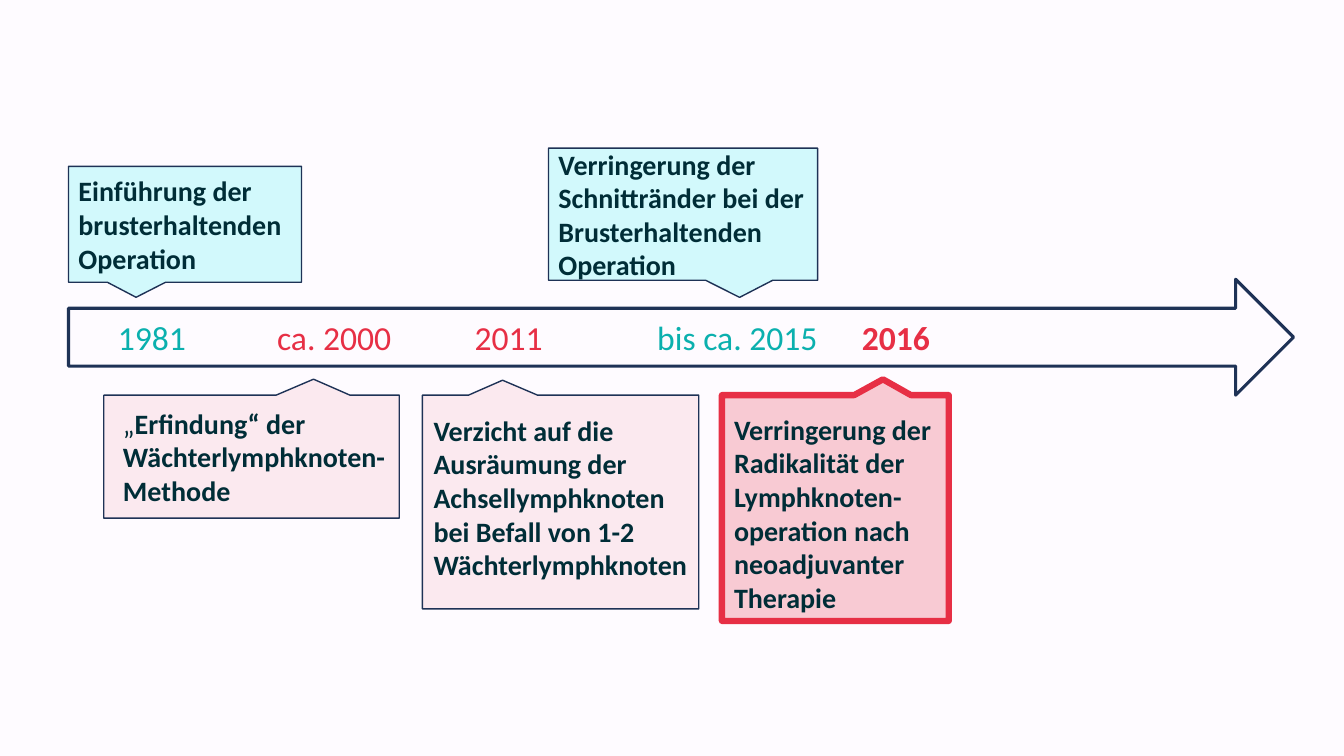
import pptx
import pptx.util
import pptx.dml.color
import pptx.enum.shapes
import pptx.enum.text
import pptx.oxml
import pptx.oxml.ns
from pptx.util import Inches

RGBColor = pptx.dml.color.RGBColor
BACKGROUND = RGBColor(0xFE, 0xFB, 0xFF)
NAVY = RGBColor(0x1E, 0x32, 0x56)
INK = RGBColor(0x00, 0x2D, 0x37)
CYAN = RGBColor(0xD2, 0xF9, 0xFC)
PINK = RGBColor(0xF8, 0xCA, 0xD3)
TEAL = RGBColor(0x0B, 0xB0, 0xAE)
RED = RGBColor(0xE7, 0x2F, 0x45)
SHAPES = pptx.enum.shapes.MSO_SHAPE
TOP = pptx.enum.text.MSO_ANCHOR.TOP
MIDDLE = pptx.enum.text.MSO_ANCHOR.MIDDLE


def add_outlined_shape(preset, box, color, width):
    shape = slide.shapes.add_shape(preset, *map(Inches, box))
    shape.shadow.inherit = False
    shape.line.color.rgb = color
    shape.line.width = pptx.util.Pt(width)
    return shape


def add_run(paragraph, text, **font_values):
    run = paragraph.add_run()
    run.text = text
    run.font.name = "Calibri"
    run.font.color.rgb = font_values.pop("color")
    for name, value in font_values.items():
        setattr(run.font, name, value)


presentation = pptx.Presentation()
presentation.slide_width = Inches(13.33)
presentation.slide_height = Inches(7.5)
slide = presentation.slides.add_slide(presentation.slide_layouts[6])
slide.background.fill.solid()
slide.background.fill.fore_color.rgb = BACKGROUND

# Time arrow
arrow = add_outlined_shape(SHAPES.RIGHT_ARROW, (0.68, 2.77, 12.15, 1.15), NAVY, 2.25)
arrow.fill.background()

# Dates, each on its own tab stop
dates = [
    ("1981", TEAL, False, 0.29),
    ("ca. 2000", RED, False, 1.87),
    ("2011", RED, False, 3.83),
    ("bis ca. 2015", TEAL, False, 5.64),
    ("2016", RED, True, 7.67),
]
date_box = slide.shapes.add_textbox(*map(Inches, (0.78, 3.09, 11.56, 0.5)))
date_box.text_frame.word_wrap = True
date_line = date_box.text_frame.paragraphs[0]
tab_list = pptx.oxml.ns.qn("a:tabLst")
tabs = date_line._p.get_or_add_pPr().makeelement(tab_list, {})
date_line._p.get_or_add_pPr().append(tabs)
for date, color, bold, position in dates:
    tab = tabs.makeelement(
        pptx.oxml.ns.qn("a:tab"), {"pos": str(Inches(position)), "algn": "l"}
    )
    tabs.append(tab)
    add_run(date_line, "\t" + date, color=color, bold=bold, size=pptx.util.Pt(24))

# Callouts: box, pointer tip, fill, opacity, line, line width, anchor,
# margins (left, top, right), text runs as (text, bold)
cyan_style = (CYAN, 100, NAVY, 1, MIDDLE, (0.1, 0.05, 0.1))
callouts = [
    ((0.68, 1.65, 2.31, 1.15), (-0.21, 0.63), *cyan_style,
     [("Einführung der brusterhaltenden Operation", True)]),
    ((5.44, 1.47, 2.67, 1.31), (0.21, 0.63), *cyan_style,
     [("Verringerung der Schnittränder bei der Brusterhaltenden Operation", True)]),
    ((1.03, 3.92, 2.93, 1.22), (0.21, -0.63), PINK, 35, NAVY, 1, TOP, (0.19, 0.11, 0.1),
     [("„", False), ("Erfindung“ der Wächterlymphknoten-Methode", True)]),
    ((4.19, 3.92, 2.74, 2.12), (-0.21, -0.57), PINK, 35, NAVY, 1, TOP, (0.11, 0.18, 0),
     [("Verzicht auf die Ausräumung der Achsellymphknoten bei Befall von 1-2 "
       "Wächterlymphknoten", True)]),
    ((7.16, 3.92, 2.25, 2.24), (0.21, -0.57), PINK, 100, RED, 4.5, TOP, (0.12, 0.17, 0.1),
     [("Verringerung der Radikalität der Lymphknoten-operation nach "
       "neoadjuvanter Therapie", True)]),
]
for box, tip, fill, opacity, line, width, anchor, margins, runs in callouts:
    callout = add_outlined_shape(SHAPES.RECTANGULAR_CALLOUT, box, line, width)
    callout.adjustments[0], callout.adjustments[1] = tip
    callout.fill.solid()
    callout.fill.fore_color.rgb = fill
    if opacity < 100:
        fill_color = callout._element.spPr.find(
            pptx.oxml.ns.qn("a:solidFill") + "/" + pptx.oxml.ns.qn("a:srgbClr")
        )
        alpha = fill_color.makeelement(
            pptx.oxml.ns.qn("a:alpha"), {"val": str(opacity * 1000)}
        )
        fill_color.append(alpha)
    left, top, right = map(Inches, margins)
    frame_format = {
        "word_wrap": True,
        "vertical_anchor": anchor,
        "margin_left": left,
        "margin_top": top,
        "margin_right": right,
        "margin_bottom": Inches(0.05),
    }
    for name, value in frame_format.items():
        setattr(callout.text_frame, name, value)
    paragraph = callout.text_frame.paragraphs[0]
    paragraph.alignment = pptx.enum.text.PP_ALIGN.LEFT
    for text, bold in runs:
        add_run(paragraph, text, color=INK, bold=bold, size=pptx.util.Pt(20))

presentation.save("out.pptx")
